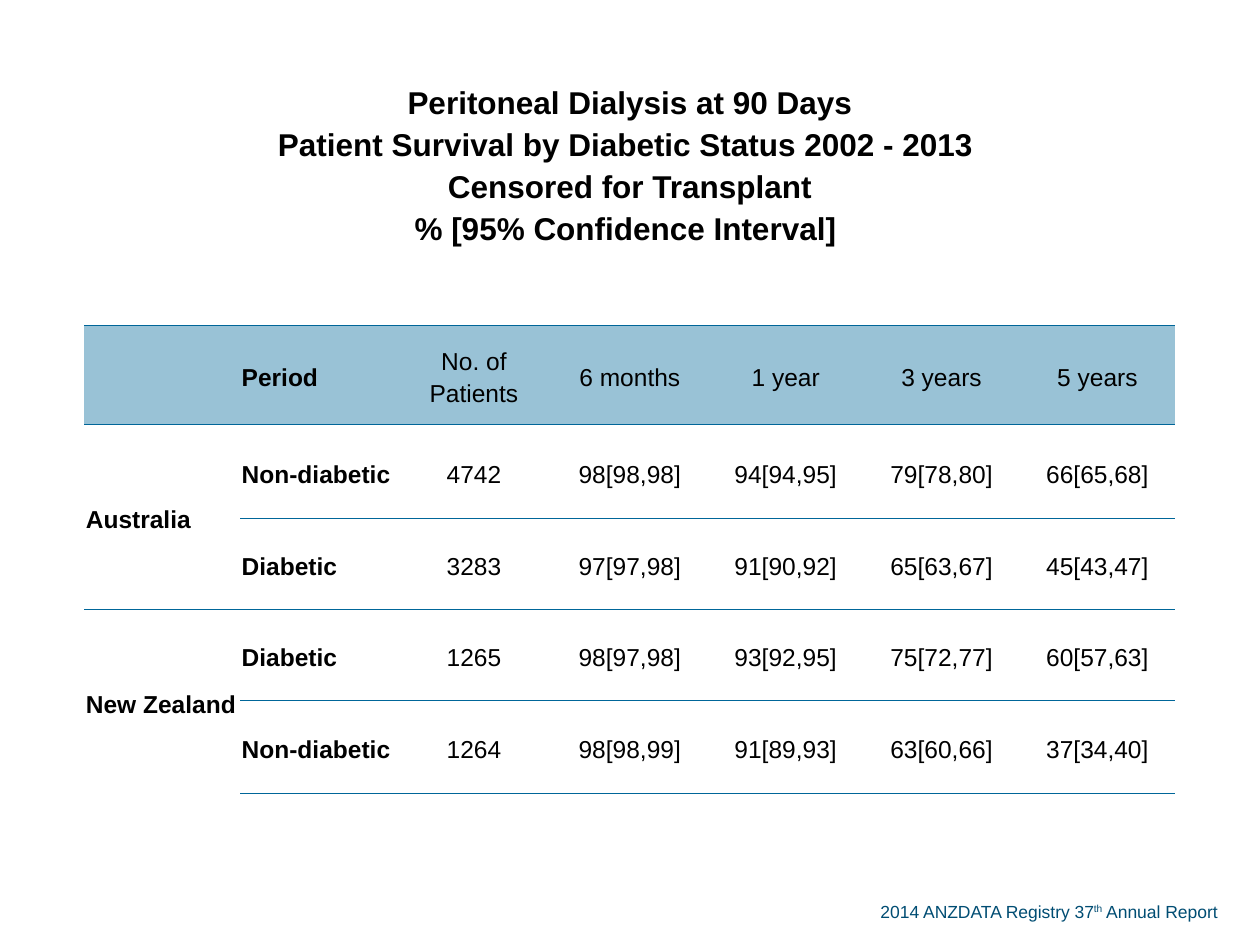
from dataclasses import dataclass

from lxml import etree
from pptx import Presentation
from pptx.dml.color import RGBColor
from pptx.enum.text import MSO_ANCHOR, PP_ALIGN
from pptx.oxml.ns import qn
from pptx.util import Cm, Pt

LEFT = PP_ALIGN.LEFT
CENTER = PP_ALIGN.CENTER
MIDDLE = MSO_ANCHOR.MIDDLE
BLANK_LAYOUT = 6
NO_STYLE = "{2D5ABB26-0587-4C30-8999-92F81FD0307C}"


@dataclass(frozen=True)
class Theme:
    font: str = "Arial"
    ink: str = "000000"
    credit: str = "004D73"
    rule: str = "006699"
    band: str = "99C2D6"
    heading_size: float = 18
    body_size: float = 14
    credit_size: float = 10
    rule_width: float = 0.5
    line_spacing: float = 1.19


THEME = Theme()

HEADING = [
    ["Peritoneal Dialysis at 90 Days"],
    [
        "Patient Survival by Diabetic Status 2002 - 2013 ",
        "Censored for Transplant",
        "% [95% Confidence Interval] ",
    ],
]
COLUMNS = ["Period", "No. of Patients", "6 months", "1 year", "3 years", "5 years"]
COUNTRIES = {
    "Australia": [
        ["Non-diabetic", "4742", "98[98,98]", "94[94,95]", "79[78,80]", "66[65,68]"],
        ["Diabetic", "3283", "97[97,98]", "91[90,92]", "65[63,67]", "45[43,47]"],
    ],
    "New Zealand": [
        ["Diabetic", "1265", "98[97,98]", "93[92,95]", "75[72,77]", "60[57,63]"],
        ["Non-diabetic", "1264", "98[98,99]", "91[89,93]", "63[60,66]", "37[34,40]"],
    ],
}
ROW_HEIGHTS = [6.55, 2.0, 1.9, 1.83, 1.83, 1.88]


def add_run(paragraph, words, size, color, bold=False):
    run = paragraph.add_run()
    run.text = words
    run.font.name = THEME.font
    run.font.size = Pt(size)
    run.font.bold = bold
    run.font.color.rgb = RGBColor.from_string(color)
    return run


def write_cell(cell, paragraphs, size, bold, align, space_after=0):
    cell.vertical_anchor = MIDDLE
    cell.margin_left = cell.margin_right = cell.margin_top = Cm(0.03)
    cell.margin_bottom = 0
    frame = cell.text_frame
    for index, lines in enumerate(paragraphs):
        paragraph = frame.add_paragraph() if index else frame.paragraphs[0]
        paragraph.alignment = align
        paragraph.line_spacing = THEME.line_spacing
        paragraph.space_after = Pt(space_after)
        for position, line in enumerate(lines):
            if position:
                paragraph.add_line_break()
            add_run(paragraph, line, size, THEME.ink, bold)


def rule_row(table, row, edges):
    for column in range(len(table.columns)):
        properties = table.cell(row, column)._tc.get_or_add_tcPr()
        for edge in edges:
            line = etree.SubElement(
                properties, qn(f"a:ln{edge}"), w=str(Pt(THEME.rule_width))
            )
            fill = etree.SubElement(line, qn("a:solidFill"))
            etree.SubElement(fill, qn("a:srgbClr"), val=THEME.rule)


def write_record(table, row, record, space_after=0):
    for column, words in enumerate(record, start=1):
        is_label = column == 1
        write_cell(
            table.cell(row, column),
            [[words]],
            THEME.body_size,
            is_label,
            LEFT if is_label else CENTER,
            0 if is_label else space_after,
        )


def add_survival_table(slide, left, top, width):
    column_count = len(COLUMNS) + 1
    table = slide.shapes.add_table(
        len(ROW_HEIGHTS), column_count, left, top, width, Cm(sum(ROW_HEIGHTS))
    ).table
    table.first_row = table.horz_banding = False
    table._tbl.tblPr.find(qn("a:tableStyleId")).text = NO_STYLE
    for column in table.columns:
        column.width = width // column_count
    for row, height in zip(table.rows, ROW_HEIGHTS):
        row.height = Cm(height)

    heading = table.cell(0, 0)
    heading.merge(table.cell(0, column_count - 1))
    write_cell(heading, HEADING, THEME.heading_size, True, CENTER)
    rule_row(table, 0, "B")

    write_record(table, 1, COLUMNS)
    rule_row(table, 1, "TB")
    for column in range(column_count):
        fill = table.cell(1, column).fill
        fill.solid()
        fill.fore_color.rgb = RGBColor.from_string(THEME.band)

    first = 2
    for country, records in COUNTRIES.items():
        last = first + len(records) - 1
        country_cell = table.cell(first, 0)
        country_cell.merge(table.cell(last, 0))
        write_cell(country_cell, [[country]], THEME.body_size, True, LEFT)
        for row, record in enumerate(records, start=first):
            write_record(table, row, record, space_after=14)
        rule_row(table, first, "T")
        rule_row(table, last, "B")
        first = last + 1


def add_credit(slide, left, top, width, height):
    frame = slide.shapes.add_textbox(left, top, width, height).text_frame
    frame.word_wrap = True
    paragraph = frame.paragraphs[0]
    for words, baseline in [
        ("2014 ANZDATA Registry 37", 0),
        ("th", 30000),
        (" Annual Report", 0),
    ]:
        run = add_run(paragraph, words, THEME.credit_size, THEME.credit)
        if baseline:
            run.font._element.set("baseline", str(baseline))


def main():
    deck = Presentation()
    deck.slide_width = Cm(25.4)
    deck.slide_height = Cm(19.05)
    slide = deck.slides.add_slide(deck.slide_layouts[BLANK_LAYOUT])
    add_credit(slide, Cm(17.5), Cm(18.03), Cm(7.6), Cm(0.69))
    add_survival_table(slide, Cm(1.7), Cm(0), Cm(22))
    deck.save("out.pptx")


if __name__ == "__main__":
    main()
